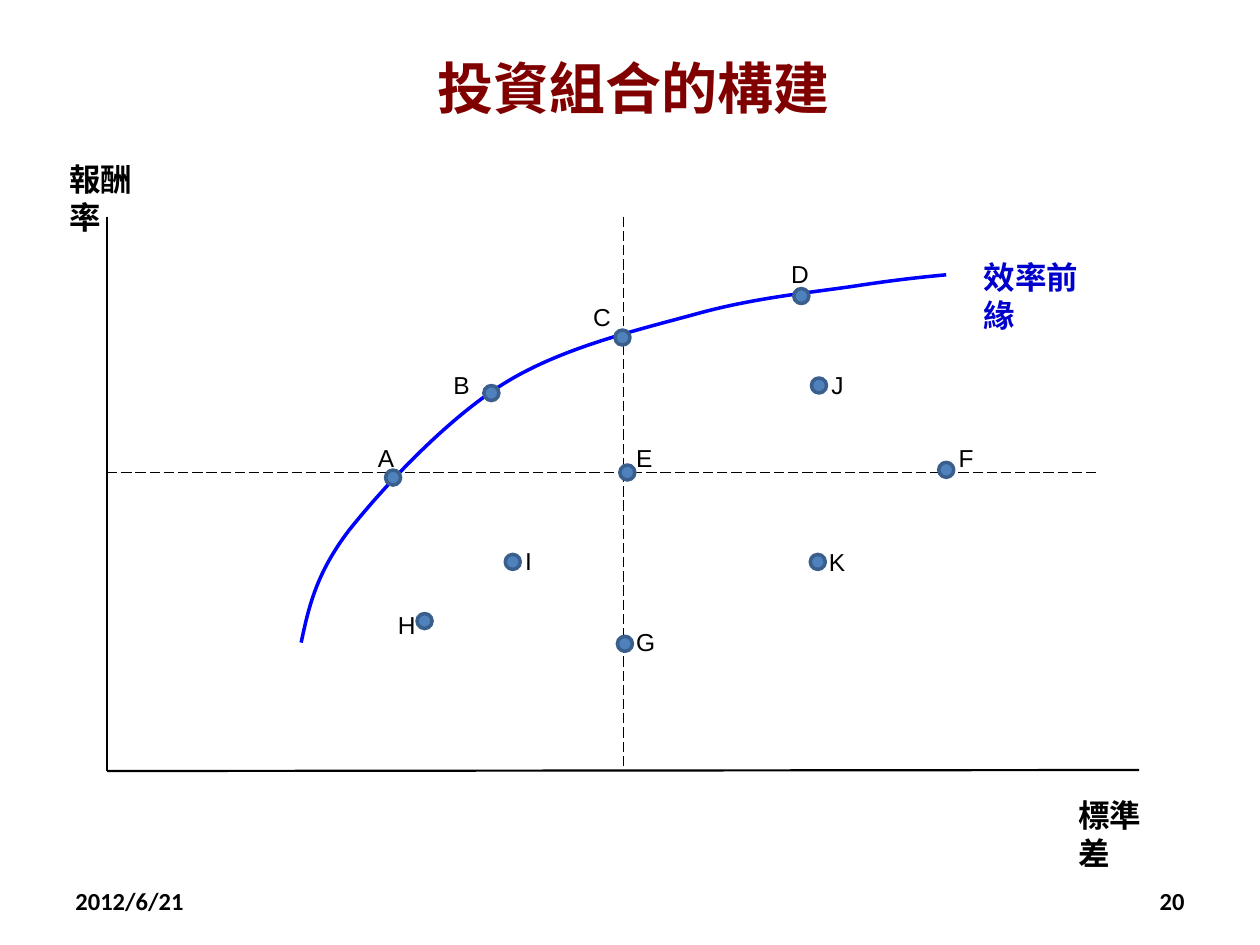
from lxml import etree
from pptx import Presentation
from pptx.dml.color import RGBColor
from pptx.enum.dml import MSO_LINE
from pptx.enum.shapes import MSO_CONNECTOR, MSO_SHAPE
from pptx.enum.text import MSO_ANCHOR, PP_ALIGN
from pptx.oxml.ns import qn
from pptx.util import Pt

STRAIGHT = MSO_CONNECTOR.STRAIGHT
DOT = MSO_SHAPE.FLOWCHART_CONNECTOR
LONG_DASH = MSO_LINE.LONG_DASH
TOP, MIDDLE = MSO_ANCHOR.TOP, MSO_ANCHOR.MIDDLE
LEFT, CENTER, RIGHT = PP_ALIGN.LEFT, PP_ALIGN.CENTER, PP_ALIGN.RIGHT

COLORS = {
    "title": "800000",
    "text": "000000",
    "frontier": "0000FF",
    "frontier_label": "0000CC",
    "dot": "4F81BD",
    "dot_edge": "3A5F8C",
}

FORMATS = {
    "title": ({"name": "Calibri", "size": Pt(32), "bold": True}, "title", CENTER, MIDDLE),
    "date": ({"name": "Calibri", "size": Pt(14), "bold": True}, "text", LEFT, MIDDLE),
    "number": ({"name": "Calibri", "size": Pt(14), "bold": True}, "text", RIGHT, MIDDLE),
    "axis": ({"name": "Arial", "size": Pt(18), "bold": True}, "text", LEFT, TOP),
    "frontier": ({"name": "Arial", "size": Pt(18), "bold": True}, "frontier_label", LEFT, TOP),
    "asset": ({"name": "Arial", "size": Pt(14), "bold": False}, "text", LEFT, TOP),
}

TEXTS = [
    ("投資組合的構建", "title", (36, 21.6, 652.3, 56.9)),
    ("2012/6/21", "date", (36, 500.4, 168, 28.8)),
    ("20", "number", (516, 500.4, 168, 28.8)),
    ("報酬率", "axis", (32.4, 87.8, 56.2, 23.8)),
    ("標準差", "axis", (609.1, 451.4, 56.2, 23.8)),
    ("效率前緣", "frontier", (555.1, 144, 70.6, 23.8)),
]

AXIS_X, AXIS_TOP, AXIS_BOTTOM = 61.2, 123.8, 440.6
GUIDE_X, GUIDE_Y = 356.4, 270
LINES = [
    ((AXIS_X, AXIS_TOP), (AXIS_X, AXIS_BOTTOM), 1.25, None),
    ((AXIS_X, AXIS_BOTTOM), (650.9, 440), 1.25, None),
    ((AXIS_X, GUIDE_Y), (626.4, GUIDE_Y), 0.75, LONG_DASH),
    ((GUIDE_X, AXIS_TOP), (GUIDE_X, AXIS_BOTTOM), 0.75, LONG_DASH),
]

FRONTIER_START = (172.1, 367.2)
FRONTIER_CURVES = [
    ((176.4, 347), (180.7, 327.6), (199.4, 303.1)),
    ((218.9, 278.6), (254.2, 240.5), (287.3, 219.6)),
    ((320.4, 198.7), (364.3, 188.6), (398.2, 179.3)),
    ((432, 169.9), (465.1, 167), (488.9, 163.4)),
    ((512.6, 159.8), (526.3, 158.4), (540.7, 157)),
]

DOT_SIZE = 8.6
LABEL_SIZE = (24, 24.2)
ASSETS = [
    ("A", (220.3, 268.6), (208.8, 249.8)),
    ("B", (276.5, 220.3), (252, 208.1)),
    ("C", (351.4, 188.6), (331.9, 169.2)),
    ("D", (453.6, 164.9), (445, 144.7)),
    ("E", (354.2, 265.7), (356.4, 249.8)),
    ("F", (536.4, 264.2), (540.7, 249.8)),
    ("G", (352.8, 363.6), (356.4, 355)),
    ("H", (238.3, 350.6), (220.3, 344.9)),
    ("I", (288.7, 316.8), (293, 308.2)),
    ("J", (463.7, 216), (468, 208.1)),
    ("K", (463, 316.8), (466.6, 308.9)),
]


def rgb(key):
    return RGBColor.from_string(COLORS[key])


def pts(*values):
    return tuple(Pt(value) for value in values)


def set_line(part, color, width):
    part.line.color.rgb = rgb(color)
    part.line.width = Pt(width)


def add_text(slide, text, role, box):
    font_values, color, align, anchor = FORMATS[role]
    label = slide.shapes.add_textbox(*pts(*box))
    frame = label.text_frame
    frame.word_wrap = True
    frame.vertical_anchor = anchor
    paragraph = frame.paragraphs[0]
    paragraph.alignment = align
    run = paragraph.add_run()
    run.text = text
    for name, value in font_values.items():
        setattr(run.font, name, value)
    run.font.color.rgb = rgb(color)


def add_line(slide, start, end, width, dash):
    line = slide.shapes.add_connector(STRAIGHT, *pts(*start, *end))
    set_line(line, "text", width)
    if dash:
        line.line.dash_style = dash
    etree.SubElement(line._element.spPr, qn("a:effectLst"))


def add_frontier(slide):
    builder = slide.shapes.build_freeform(*pts(*FRONTIER_START))
    builder.add_line_segments(
        [pts(*point) for curve in FRONTIER_CURVES for point in curve], close=False
    )
    frontier = builder.convert_to_shape()
    frontier.shadow.inherit = False
    frontier.fill.background()
    set_line(frontier, "frontier", 2)
    path = frontier._element.find(".//" + qn("a:path"))
    segments = path.findall(qn("a:lnTo"))
    for first in range(0, len(segments), 3):
        curve = etree.SubElement(path, qn("a:cubicBezTo"))
        for segment in segments[first:first + 3]:
            curve.append(segment[0])
            path.remove(segment)


def add_dot(slide, position):
    dot = slide.shapes.add_shape(DOT, *pts(*position, DOT_SIZE, DOT_SIZE))
    dot.shadow.inherit = False
    dot.fill.solid()
    dot.fill.fore_color.rgb = rgb("dot")
    set_line(dot, "dot_edge", 2)


def main():
    deck = Presentation()
    deck.slide_width, deck.slide_height = pts(720, 540)
    slide = deck.slides.add_slide(deck.slide_layouts[6])
    for line in LINES:
        add_line(slide, *line)
    add_frontier(slide)
    for text in TEXTS:
        add_text(slide, *text)
    for name, dot_at, label_at in ASSETS:
        add_text(slide, name, "asset", label_at + LABEL_SIZE)
        add_dot(slide, dot_at)
    deck.save("out.pptx")


if __name__ == "__main__":
    main()
